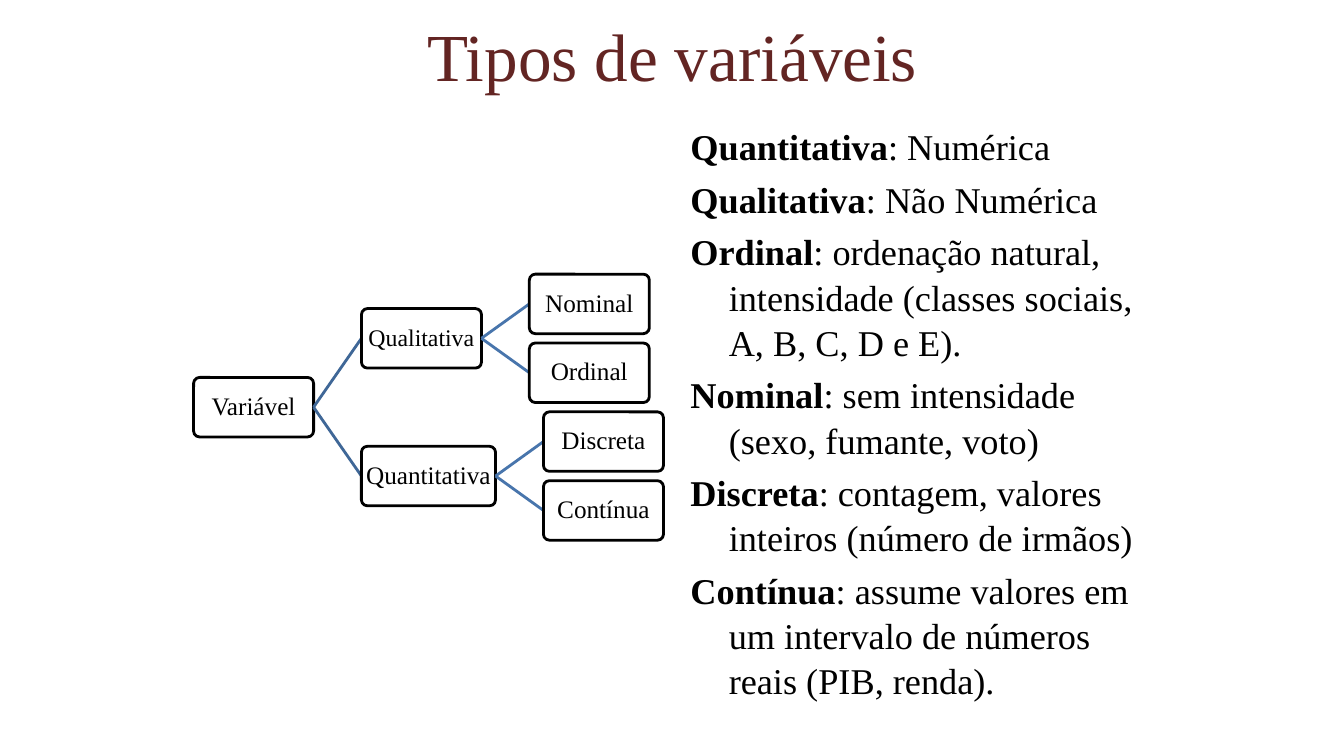
from dataclasses import dataclass

from lxml import etree
from pptx import Presentation
from pptx.dml.color import RGBColor
from pptx.enum.shapes import MSO_CONNECTOR, MSO_SHAPE
from pptx.enum.text import MSO_ANCHOR, PP_ALIGN
from pptx.oxml.ns import qn
from pptx.util import Inches, Pt

ROUNDED = MSO_SHAPE.ROUNDED_RECTANGLE
STRAIGHT = MSO_CONNECTOR.STRAIGHT
MIDDLE = MSO_ANCHOR.MIDDLE
CENTER = PP_ALIGN.CENTER


@dataclass(frozen=True)
class Theme:
    font: str = "Times New Roman"
    title_color: RGBColor = RGBColor(0x63, 0x25, 0x23)
    ink: RGBColor = RGBColor(0, 0, 0)
    paper: RGBColor = RGBColor(0xFF, 0xFF, 0xFF)
    root_link: RGBColor = RGBColor(0x3F, 0x67, 0x97)
    branch_link: RGBColor = RGBColor(0x48, 0x75, 0xAC)
    title_size: float = 48
    body_size: float = 25.9
    node_size: float = 18
    line_width: float = 2


THEME = Theme()

NODE_WIDTH = 1.19
NODE_HEIGHT = 0.59
COLUMN_GAP = 0.475
TREE_LEFT = 1.92
LEAF_TOP = 2.72
LEAF_PITCH = 0.683

BRANCHES = [
    ("Qualitativa", NODE_WIDTH, 17, ["Nominal", "Ordinal"]),
    ("Quantitativa", 1.33, THEME.node_size, ["Discreta", "Contínua"]),
]

DEFINITIONS = [
    ("Quantitativa", ": Numérica"),
    ("Qualitativa", ": Não Numérica"),
    ("Ordinal", ": ordenação natural, intensidade (classes sociais, A, B, C, D e E)."),
    ("Nominal", ": sem intensidade (sexo, fumante, voto)"),
    ("Discreta", ": contagem, valores inteiros (número de irmãos)"),
    ("Contínua", ": assume valores em um intervalo de números reais (PIB, renda)."),
]


def style_run(run, size, color=THEME.ink, bold=False):
    run.font.name = THEME.font
    run.font.size = Pt(size)
    run.font.color.rgb = color
    run.font.bold = bold


def add_text_box(slide, left, top, width, height):
    box = slide.shapes.add_textbox(
        Inches(left), Inches(top), Inches(width), Inches(height)
    )
    box.text_frame.word_wrap = True
    return box.text_frame


def add_title(slide, text):
    frame = add_text_box(slide, 2.17, 0, 9, 1.08)
    frame.vertical_anchor = MIDDLE
    frame.text = text
    paragraph = frame.paragraphs[0]
    paragraph.alignment = CENTER
    style_run(paragraph.runs[0], THEME.title_size, THEME.title_color)


def add_node(slide, text, left, center, width=NODE_WIDTH, size=THEME.node_size):
    shape = slide.shapes.add_shape(
        ROUNDED,
        Inches(left),
        Inches(center - NODE_HEIGHT / 2),
        Inches(width),
        Inches(NODE_HEIGHT),
    )
    shape.adjustments[0] = 0.1
    shape.shadow.inherit = False
    shape.fill.solid()
    shape.fill.fore_color.rgb = THEME.paper
    shape.line.color.rgb = THEME.ink
    shape.line.width = Pt(THEME.line_width)
    frame = shape.text_frame
    frame.margin_left = frame.margin_right = Inches(0.01)
    frame.margin_top = frame.margin_bottom = Inches(0.01)
    frame.vertical_anchor = MIDDLE
    frame.word_wrap = True
    frame.text = text
    paragraph = frame.paragraphs[0]
    paragraph.alignment = CENTER
    paragraph.line_spacing = 0.9
    style_run(paragraph.runs[0], size)


def add_link(slide, left, start, end, color):
    link = slide.shapes.add_connector(
        STRAIGHT,
        Inches(left),
        Inches(start),
        Inches(left + COLUMN_GAP),
        Inches(end),
    )
    link.line.color.rgb = color
    link.line.width = Pt(THEME.line_width)
    etree.SubElement(link._element.spPr, qn("a:effectLst"))


def add_tree(slide):
    root_right = TREE_LEFT + NODE_WIDTH
    branch_left = root_right + COLUMN_GAP
    first_center = LEAF_TOP + NODE_HEIGHT / 2
    root_center = first_center + 1.5 * LEAF_PITCH
    add_node(slide, "Variável", TREE_LEFT, root_center)
    for branch_index, (name, width, size, leaves) in enumerate(BRANCHES):
        branch_center = first_center + (2 * branch_index + 0.5) * LEAF_PITCH
        branch_right = branch_left + width
        add_link(slide, root_right, root_center, branch_center, THEME.root_link)
        add_node(slide, name, branch_left, branch_center, width, size)
        for leaf_index, leaf in enumerate(leaves):
            leaf_center = branch_center + (leaf_index - 0.5) * LEAF_PITCH
            add_link(
                slide, branch_right, branch_center, leaf_center, THEME.branch_link
            )
            add_node(slide, leaf, branch_right + COLUMN_GAP, leaf_center)


def add_definitions(slide):
    frame = add_text_box(slide, 6.75, 1.17, 4.67, 5.92)
    for index, (term, meaning) in enumerate(DEFINITIONS):
        paragraph = frame.add_paragraph() if index else frame.paragraphs[0]
        paragraph.line_spacing = 1.04
        paragraph.space_before = Pt(5.2 if index else 0)
        properties = paragraph._p.get_or_add_pPr()
        properties.set("marL", str(Inches(0.38)))
        properties.set("indent", str(-Inches(0.38)))
        for text, bold in ((term, True), (meaning, False)):
            run = paragraph.add_run()
            run.text = text
            style_run(run, THEME.body_size, bold=bold)


def main():
    presentation = Presentation()
    presentation.slide_width = Inches(13.33)
    presentation.slide_height = Inches(7.5)
    slide = presentation.slides.add_slide(presentation.slide_layouts[6])
    add_title(slide, "Tipos de variáveis")
    add_tree(slide)
    add_definitions(slide)
    presentation.save("out.pptx")


if __name__ == "__main__":
    main()
